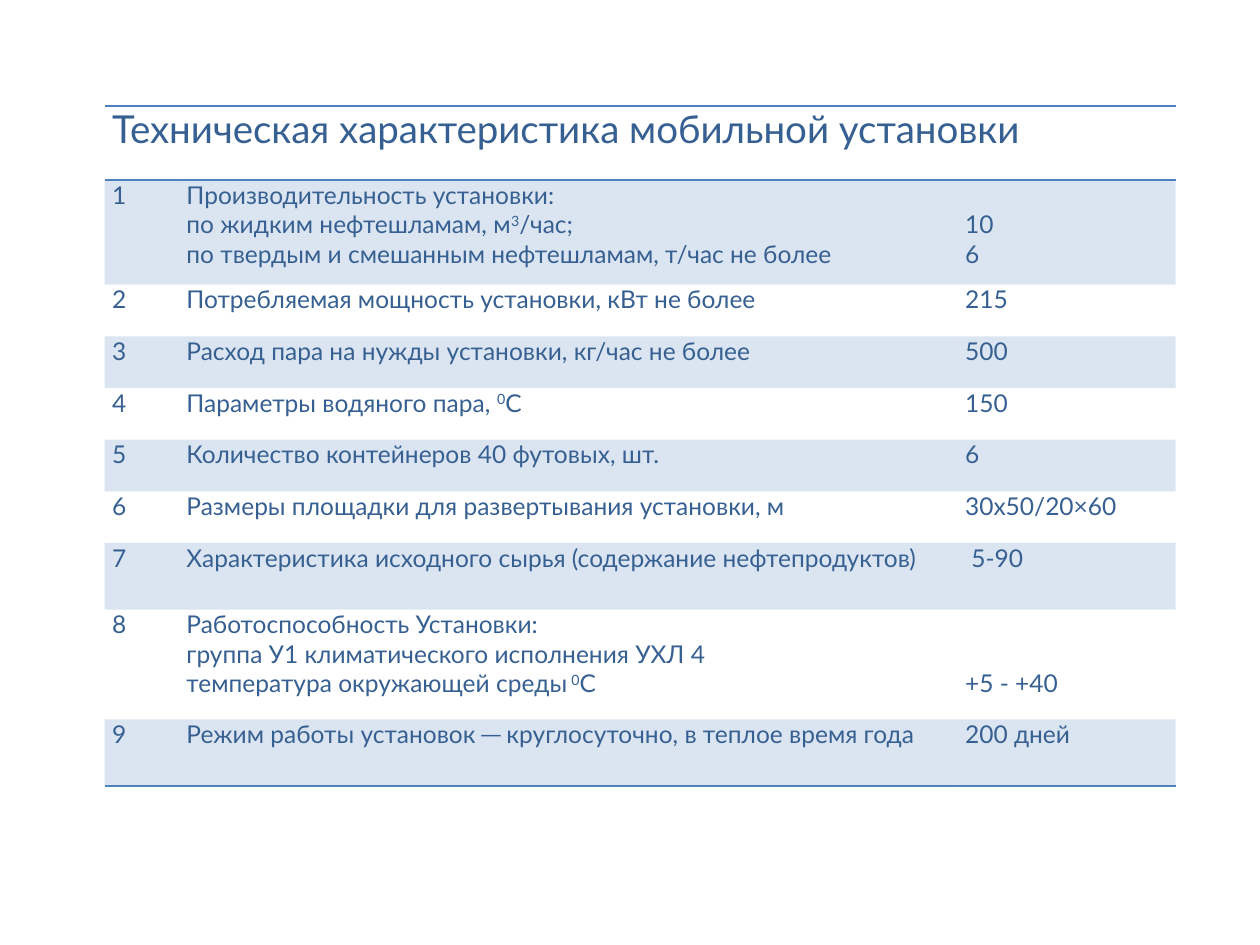
from lxml.etree import SubElement
from pptx import Presentation
from pptx.dml.color import RGBColor
from pptx.oxml import parse_xml
from pptx.oxml.ns import nsdecls, qn
from pptx.util import Inches, Pt

ACCENT = "4F81BD"
TEXT = "376092"
NO_GRID_STYLE = "{2D5ABB26-0587-4C30-8999-92F81FD0307C}"
LINE_HEIGHT = 0.233
COLUMN_WIDTHS = [0.59, 6.18, 1.73]
ROW_HEIGHTS = [0.59, 0.83, 0.41, 0.41, 0.41, 0.41, 0.41, 0.53, 0.87, 0.53]
TITLE = "Техническая характеристика мобильной установки"
SPECIFICATIONS = [
    (["Производительность установки:",
      "по жидким нефтешламам, м^3^/час;",
      "по твердым и смешанным нефтешламам, т/час не более"], ["10", "6"]),
    (["Потребляемая мощность установки, кВт не более"], ["215"]),
    (["Расход пара на нужды установки, кг/час не более"], ["500"]),
    (["Параметры водяного пара, ^0^С"], ["150"]),
    (["Количество контейнеров 40 футовых, шт."], ["6"]),
    (["Размеры площадки для развертывания установки, м"], ["30х50/20×60"]),
    (["Характеристика исходного сырья (содержание нефтепродуктов)"], [" 5-90"]),
    (["Работоспособность Установки:",
      "группа У1 климатического исполнения УХЛ 4",
      "температура окружающей среды^ 0^С"], ["+5 - +40"]),
    (["Режим работы установок ─ круглосуточно, в теплое время года"], ["200 дней"]),
]


def color(hex_value):
    """Turn a hex string into a colour."""
    return RGBColor.from_string(hex_value)


def write_cell(cell, lines, size=14, skipped_lines=0):
    """Write lines into a cell; text between carets is superscript."""
    margins = {"margin_left": 0.06, "margin_right": 0.06, "margin_bottom": 0,
               "margin_top": skipped_lines * LINE_HEIGHT}
    for name, value in margins.items():
        setattr(cell, name, Inches(value))
    frame = cell.text_frame
    for index, line in enumerate(lines):
        paragraph = frame.add_paragraph() if index else frame.paragraphs[0]
        for part, text in enumerate(line.split("^")):
            run = paragraph.add_run()
            run.text = text
            for name, value in {"name": "Lato", "size": Pt(size)}.items():
                setattr(run.font, name, value)
            run.font.color.rgb = color(TEXT)
            if part % 2:
                run.font._element.set("baseline", "30000")


def shade_cell(cell):
    """Fill a cell with the accent colour at 20 percent opacity."""
    cell.fill.solid()
    cell.fill.fore_color.rgb = color(ACCENT)
    accent = cell._tc.tcPr.find(".//" + qn("a:srgbClr"))
    SubElement(accent, qn("a:alpha")).set("val", "20000")


def rule_row(table, row, sides):
    """Draw one-point rules on the given sides of every cell in a row."""
    for cell in table.rows[row].cells:
        properties = cell._tc.get_or_add_tcPr()
        for position, side in enumerate(sides):
            line = parse_xml(
                f'<a:{side} {nsdecls("a")} w="{Pt(1)}"><a:solidFill>'
                f'<a:srgbClr val="{ACCENT}"/></a:solidFill></a:{side}>')
            properties.insert(position, line)


def add_specification_table(slide, left, top, width, height):
    """Place the numbered specification table in the given box."""
    shape = slide.shapes.add_table(len(ROW_HEIGHTS), len(COLUMN_WIDTHS),
                                   left, top, width, height)
    table = shape.table
    table._tbl.tblPr.find(qn("a:tableStyleId")).text = NO_GRID_STYLE
    for name in ("first_row", "horz_banding"):
        setattr(table, name, False)
    for column, column_width in zip(table.columns, COLUMN_WIDTHS):
        column.width = Inches(column_width)
    for row, row_height in zip(table.rows, ROW_HEIGHTS):
        row.height = Inches(row_height)

    table.cell(0, 0).merge(table.cell(0, 2))
    write_cell(table.cell(0, 0), [TITLE], size=22)
    for number, (labels, values) in enumerate(SPECIFICATIONS, start=1):
        number_cell, label_cell, value_cell = table.rows[number].cells
        write_cell(number_cell, [str(number)])
        write_cell(label_cell, labels)
        write_cell(value_cell, values, skipped_lines=len(labels) - len(values))
        if number % 2:
            for cell in table.rows[number].cells:
                shade_cell(cell)
    rule_row(table, 0, ["lnT", "lnB"])
    rule_row(table, len(SPECIFICATIONS), ["lnB"])


def main():
    """Build and save the presentation."""
    presentation = Presentation()
    presentation.slide_width = Inches(10)
    presentation.slide_height = Inches(7.5)
    slide = presentation.slides.add_slide(presentation.slide_layouts[6])
    add_specification_table(slide, Inches(0.83), Inches(0.84),
                            Inches(8.5), Inches(5.42))
    presentation.save("out.pptx")


if __name__ == "__main__":
    main()
